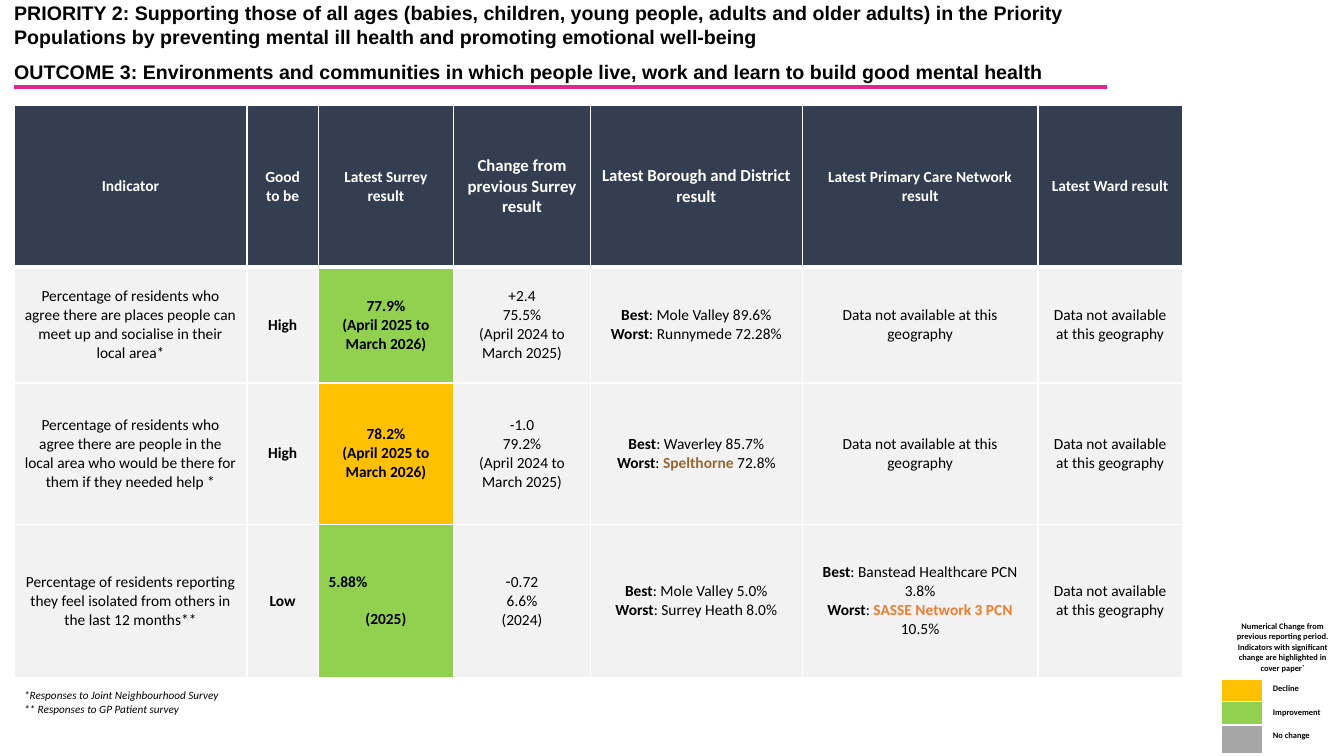
from lxml import etree
from pptx import Presentation
from pptx.dml.color import RGBColor
from pptx.enum.shapes import MSO_CONNECTOR
from pptx.enum.text import MSO_ANCHOR, MSO_AUTO_SIZE, PP_ALIGN
from pptx.oxml.ns import qn
from pptx.util import Pt

STRAIGHT = MSO_CONNECTOR.STRAIGHT
LEFT, CENTER = PP_ALIGN.LEFT, PP_ALIGN.CENTER
MIDDLE = MSO_ANCHOR.MIDDLE
NO_FIT, GROW = MSO_AUTO_SIZE.NONE, MSO_AUTO_SIZE.SHAPE_TO_FIT_TEXT
TITLE_ONLY = 5

COLORS = {
    "white": "FFFFFF", "black": "000000", "pink": "E22691", "navy": "333F50",
    "pale": "F2F2F2", "improvement": "92D050", "decline": "FFC000",
    "no change": "A6A6A6", "brown": "996633", "orange": "ED7D31",
}
BODY = {"name": "Calibri", "size": 11, "color": "black", "bold": False}
STRONG = BODY | {"bold": True}
HEADER = STRONG | {"color": "white"}
LARGE_HEADER = HEADER | {"size": 12}
TITLE = {"name": "Arial", "size": 14, "color": "black", "bold": True}
FOOTNOTE = BODY | {"size": 8, "italic": True}
LEGEND = STRONG | {"size": 6}

COLUMN_WIDTHS = [166.3, 51.1, 96.5, 97.9, 151.2, 168.5, 103]
ROW_HEIGHTS = [115.2, 82.8, 100.8, 109.4]
HEADINGS = [
    ("Indicator", HEADER), ("Good to be", HEADER), ("Latest Surrey result", HEADER),
    ("Change from previous Surrey result", LARGE_HEADER),
    ("Latest Borough and District result", LARGE_HEADER),
    ("Latest Primary Care Network result", HEADER), ("Latest Ward result", HEADER),
]
NO_DATA = ["Data not available at this geography"]
LATEST_PERIOD = "(April 2025 to March 2026)"
PREVIOUS_PERIOD = "(April 2024 to March 2025)"
BEST, WORST = ("Best", STRONG), ("Worst", STRONG)
# Each cell is a list of paragraphs; a paragraph is a string or a list of runs.
INDICATORS = [
    ("improvement", [
        ["Percentage of residents who agree there are places people can meet up "
         "and socialise in their local area*"],
        ["High"], ["77.9%", LATEST_PERIOD], ["+2.4", "75.5%", PREVIOUS_PERIOD],
        [[BEST, (": Mole Valley 89.6%", BODY)], [WORST, (": Runnymede 72.28%", BODY)]],
        NO_DATA, NO_DATA]),
    ("decline", [
        ["Percentage of residents who agree there are people in the local area "
         "who would be there for them if they needed help *"],
        ["High"], ["78.2%", LATEST_PERIOD], ["-1.0", "79.2%", PREVIOUS_PERIOD],
        [[BEST, (": Waverley 85.7%", BODY)],
         [WORST, (": ", BODY), ("Spelthorne", STRONG | {"color": "brown"}),
          (" 72.8%", BODY)]],
        NO_DATA, NO_DATA]),
    ("improvement", [
        ["Percentage of residents reporting they feel isolated from others in "
         "the last 12 months**"],
        ["Low"], ["5.88%", "(2025)"],
        [[("-", BODY | {"size": 12}), ("0.72", BODY)], "6.6%", "(2024)"],
        [[BEST, (": Mole Valley 5.0%", BODY)], [WORST, (": Surrey Heath 8.0%", BODY)]],
        [[BEST, (": Banstead Healthcare PCN 3.8%", BODY)],
         [WORST, (": ", BODY), ("SASSE Network 3 PCN", STRONG | {"color": "orange"})],
         "10.5%"],
        NO_DATA]),
]
LEGEND_TITLE = ("Numerical Change from previous reporting period. Indicators with "
                "significant change are highlighted in cover paper`")
LEGEND_LABELS = ["Decline", "Improvement", "No change"]


def rgb(name):
    return RGBColor.from_string(COLORS[name])


def fill_solid(filled, color):
    filled.fill.solid()
    filled.fill.fore_color.rgb = rgb(color)


def write_text(frame, paragraphs, style, **paragraph_format):
    for index, content in enumerate(paragraphs):
        paragraph = frame.paragraphs[0] if index == 0 else frame.add_paragraph()
        for name, value in paragraph_format.items():
            setattr(paragraph, name, value)
        runs = [(content, style)] if isinstance(content, str) else content
        for text, run_style in runs:
            run = paragraph.add_run()
            run.text = text
            for name, value in run_style.items():
                if name == "color":
                    run.font.color.rgb = rgb(value)
                else:
                    setattr(run.font, name, Pt(value) if name == "size" else value)


def set_borders(cell, **widths):
    properties = cell._tc.get_or_add_tcPr()
    for index, side in enumerate("LRTB"):
        width = Pt(widths.get(side, 1))
        line = etree.Element(qn(f"a:ln{side}"), w=str(width))
        solid = etree.SubElement(line, qn("a:solidFill"))
        etree.SubElement(solid, qn("a:srgbClr"), val=COLORS["white"])
        properties.insert(index, line)


def add_plain_table(slide, left, top, widths, heights):
    """Add a table without banding; its first row ends in a heavy white border."""
    frame = slide.shapes.add_table(len(heights), len(widths), Pt(left), Pt(top),
                                   Pt(sum(widths)), Pt(sum(heights)))
    table = frame.table
    table.first_row = table.horz_banding = False
    for column, width in zip(table.columns, widths):
        column.width = Pt(width)
    for index, (row, height) in enumerate(zip(table.rows, heights)):
        row.height = Pt(height)
        for cell in row.cells:
            cell.fill.background()
            set_borders(cell, T=3 if index == 1 else 1, B=3 if index == 0 else 1)
    return table


def add_title(slide):
    title = slide.shapes.title
    title.left, title.top, title.width, title.height = Pt(2.9), Pt(0), Pt(841.7), Pt(60.5)
    fill_solid(title, "white")
    title.line.color.rgb = rgb("white")
    title.line.width = Pt(0.75)
    frame = title.text_frame
    frame.auto_size, frame.vertical_anchor = NO_FIT, MIDDLE
    write_text(frame, [
        "PRIORITY 2: Supporting those of all ages (babies, children, young people, adults "
        "and older adults) in the Priority Populations by preventing mental ill health "
        "and promoting emotional well-being",
        "OUTCOME 3: Environments and communities in which people live, work and learn to "
        "build good mental health"], TITLE, alignment=LEFT)
    frame.paragraphs[1].line_spacing = 1.5


def add_title_rule(slide):
    rule = slide.shapes.add_connector(STRAIGHT, Pt(10.1), Pt(62), Pt(790.6), Pt(62))
    rule.line.color.rgb = rgb("pink")
    rule.line.width = Pt(3)
    etree.SubElement(rule._element.spPr, qn("a:effectLst"))


def add_indicator_table(slide):
    table = add_plain_table(slide, 10.1, 75.6, COLUMN_WIDTHS, ROW_HEIGHTS)
    for column, (heading, style) in enumerate(HEADINGS):
        cell = table.cell(0, column)
        fill_solid(cell, "navy")
        cell.vertical_anchor = MIDDLE
        write_text(cell.text_frame, [heading], style, alignment=CENTER)
    for row, (status, contents) in enumerate(INDICATORS, start=1):
        for column, paragraphs in enumerate(contents):
            cell = table.cell(row, column)
            fill_solid(cell, status if column == 2 else "pale")
            cell.vertical_anchor = MIDDLE
            style = STRONG if column in (1, 2) else BODY
            write_text(cell.text_frame, paragraphs, style, alignment=CENTER)
    percentage, year = table.cell(3, 2).text_frame.paragraphs
    percentage.alignment = LEFT
    year.space_before = Pt(13.5)


def add_footnotes(slide):
    frame = slide.shapes.add_textbox(Pt(10.1), Pt(488.2), Pt(902.9), Pt(36)).text_frame
    frame.word_wrap, frame.auto_size = True, GROW
    write_text(frame, ["*Responses to Joint Neighbourhood Survey",
                       "** Responses to GP Patient survey"], FOOTNOTE)


def add_legend(slide):
    table = add_plain_table(slide, 872.6, 439.9, [29.5, 57.6], [39.6, 16.6, 16.6, 20.2])
    heading = table.cell(0, 0)
    heading.merge(table.cell(0, 1))
    write_text(heading.text_frame, [LEGEND_TITLE], LEGEND,
               alignment=CENTER, line_spacing=Pt(7.5))
    for row, label in enumerate(LEGEND_LABELS, start=1):
        swatch = table.cell(row, 0)
        fill_solid(swatch, label.lower())
        write_text(table.cell(row, 1).text_frame, [label], LEGEND, line_spacing=Pt(7.5))
    for empty in [table.cell(0, 1)] + [table.cell(row, 0) for row in (1, 2, 3)]:
        # Small end marks keep the empty cells from stretching their rows.
        etree.SubElement(empty.text_frame.paragraphs[0]._p, qn("a:endParaRPr"), sz="600")


def main():
    presentation = Presentation()
    presentation.slide_width, presentation.slide_height = Pt(960), Pt(540)
    slide = presentation.slides.add_slide(presentation.slide_layouts[TITLE_ONLY])
    add_title(slide)
    add_title_rule(slide)
    add_indicator_table(slide)
    add_footnotes(slide)
    add_legend(slide)
    presentation.save("out.pptx")


if __name__ == "__main__":
    main()
